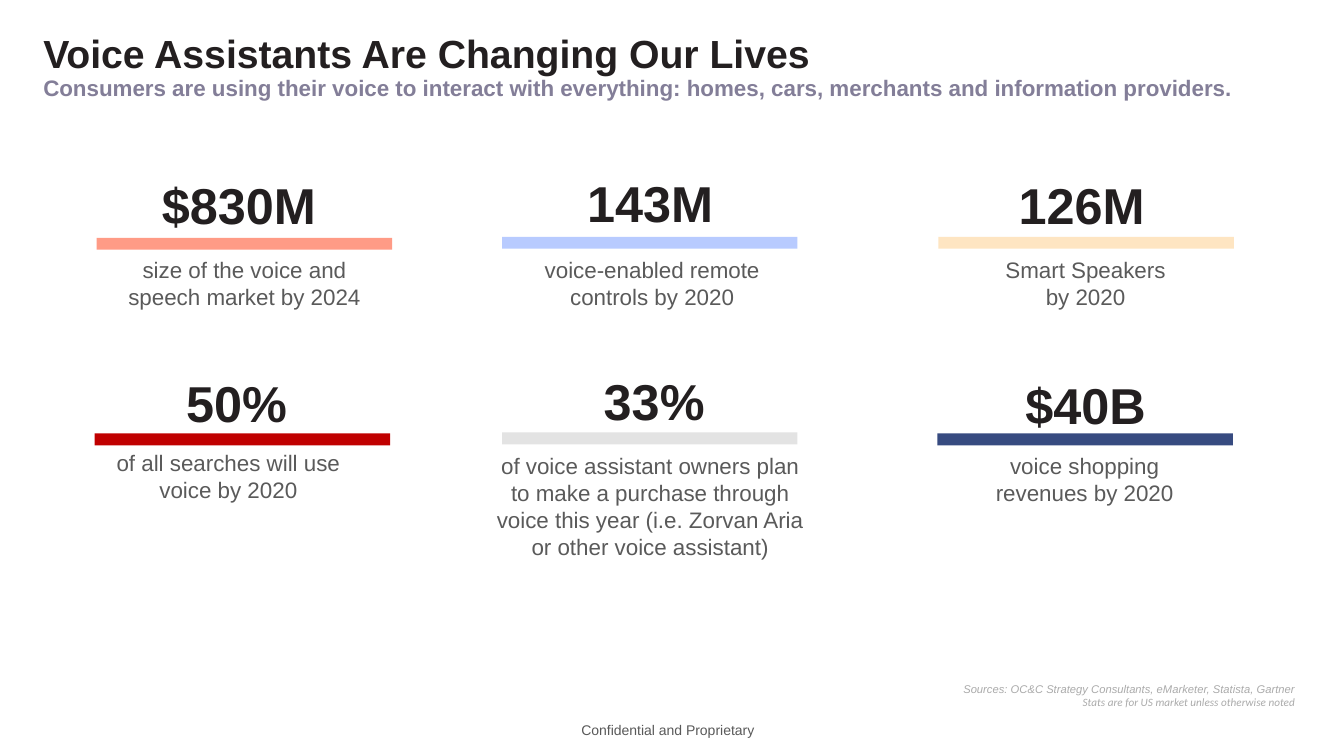
from dataclasses import dataclass

from pptx import Presentation
from pptx.dml.color import RGBColor
from pptx.enum.shapes import MSO_SHAPE
from pptx.enum.text import MSO_ANCHOR, PP_ALIGN
from pptx.util import Pt


@dataclass(frozen=True)
class Theme:
    sans: str = "Arial"
    note_font: str = "Calibri"
    ink: str = "231F20"
    subtitle: str = "837E98"
    caption: str = "5A5A5A"
    footer: str = "595959"
    source: str = "AAAAAA"
    coral: str = "FF9B86"
    sky: str = "B8CBFF"
    cream: str = "FEE5C2"
    red: str = "C00000"
    grey: str = "E3E3E3"
    navy: str = "374B80"
    title_size: int = 28
    figure_size: int = 36
    body_size: int = 16
    footer_size: int = 10
    source_size: int = 8


@dataclass(frozen=True)
class Stat:
    figure: str
    figure_center: float
    figure_top: float
    bar_color: str
    bar_left: float
    bar_top: float
    caption: str
    caption_center: float
    caption_top: float
    caption_width: float
    caption_height: float = 46


THEME = Theme()
BAR_WIDTH, BAR_HEIGHT = 211, 8.5
FIGURE_WIDTH, FIGURE_HEIGHT = 144, 51

STATS = [
    Stat("$830M", 170.6, 121, THEME.coral, 69.1, 169.9,
         "size of the voice and speech market by 2024", 174.6, 179.3, 211),
    Stat("143M", 464.4, 119.5, THEME.sky, 358.6, 169.2,
         "voice-enabled remote controls by 2020", 465.8, 179.3, 214.6),
    Stat("126M", 772.6, 121, THEME.cream, 670.3, 169.2,
         "Smart Speakers\nby 2020", 775.4, 179.3, 210.2),
    Stat("50%", 169, 262, THEME.red, 67.7, 309.6,
         "of all searches will use voice by 2020", 163.1, 317.5, 211),
    Stat("33%", 467.3, 260.6, THEME.grey, 358.6, 308.9,
         "of voice assistant owners plan to make a purchase through "
         "voice this year (i.e. Zorvan Aria or other voice assistant)",
         464.4, 319.7, 240.5, 104.4),
    Stat("$40B", 775.4, 263.5, THEME.navy, 669.6, 309.6,
         "voice shopping revenues by 2020", 774.7, 319.7, 149.8),
]


def add_text(slide, text, left, top, width, height, size, color, bold=False,
             italic=False, align=PP_ALIGN.LEFT, spacing=1.0,
             anchor=MSO_ANCHOR.TOP):
    box = slide.shapes.add_textbox(Pt(left), Pt(top), Pt(width), Pt(height))
    frame = box.text_frame
    frame.word_wrap = True
    frame.vertical_anchor = anchor
    frame.text = text
    for paragraph in frame.paragraphs:
        paragraph.alignment = align
        paragraph.line_spacing = spacing
        for run in paragraph.runs:
            run.font.name = THEME.sans
            run.font.size = Pt(size)
            run.font.bold = bold
            run.font.italic = italic
            run.font.color.rgb = RGBColor.from_string(color)
    return frame


def add_bar(slide, left, top, color):
    bar = slide.shapes.add_shape(MSO_SHAPE.RECTANGLE, Pt(left), Pt(top),
                                 Pt(BAR_WIDTH), Pt(BAR_HEIGHT))
    bar.shadow.inherit = False
    bar.fill.solid()
    bar.fill.fore_color.rgb = RGBColor.from_string(color)
    bar.line.fill.background()


def add_stat(slide, stat):
    add_text(slide, stat.figure, stat.figure_center - FIGURE_WIDTH / 2,
             stat.figure_top, FIGURE_WIDTH, FIGURE_HEIGHT, THEME.figure_size,
             THEME.ink, bold=True, align=PP_ALIGN.CENTER)
    add_bar(slide, stat.bar_left, stat.bar_top, stat.bar_color)
    add_text(slide, stat.caption, stat.caption_center - stat.caption_width / 2,
             stat.caption_top, stat.caption_width, stat.caption_height,
             THEME.body_size, THEME.caption, align=PP_ALIGN.CENTER)


def add_heading(slide):
    add_text(slide, "Voice Assistants Are Changing Our Lives",
             23.8, 20.2, 907, 39.6, THEME.title_size, THEME.ink, bold=True,
             spacing=0.9, anchor=MSO_ANCHOR.MIDDLE)
    add_text(slide, "Consumers are using their voice to interact with everything: "
             "homes, cars, merchants and information providers.",
             23.8, 51.8, 907, 28, THEME.body_size, THEME.subtitle, bold=True,
             spacing=0.9)


def add_closing_lines(slide):
    sources = add_text(
        slide, "Sources: OC&C Strategy Consultants, eMarketer, Statista, Gartner\n"
        "Stats are for US market unless otherwise noted",
        494.6, 483.8, 437.8, 34.6, THEME.source_size, THEME.source,
        italic=True, align=PP_ALIGN.RIGHT)
    sources.paragraphs[1].runs[0].font.name = THEME.note_font
    add_text(slide, "Confidential and Proprietary", 299.5, 513.4, 355, 15,
             THEME.footer_size, THEME.footer, align=PP_ALIGN.CENTER, spacing=0.9)


def main():
    presentation = Presentation()
    presentation.slide_width = Pt(960)
    presentation.slide_height = Pt(540)
    slide = presentation.slides.add_slide(presentation.slide_layouts[6])
    add_heading(slide)
    for stat in STATS:
        add_stat(slide, stat)
    add_closing_lines(slide)
    presentation.save("out.pptx")


if __name__ == "__main__":
    main()
